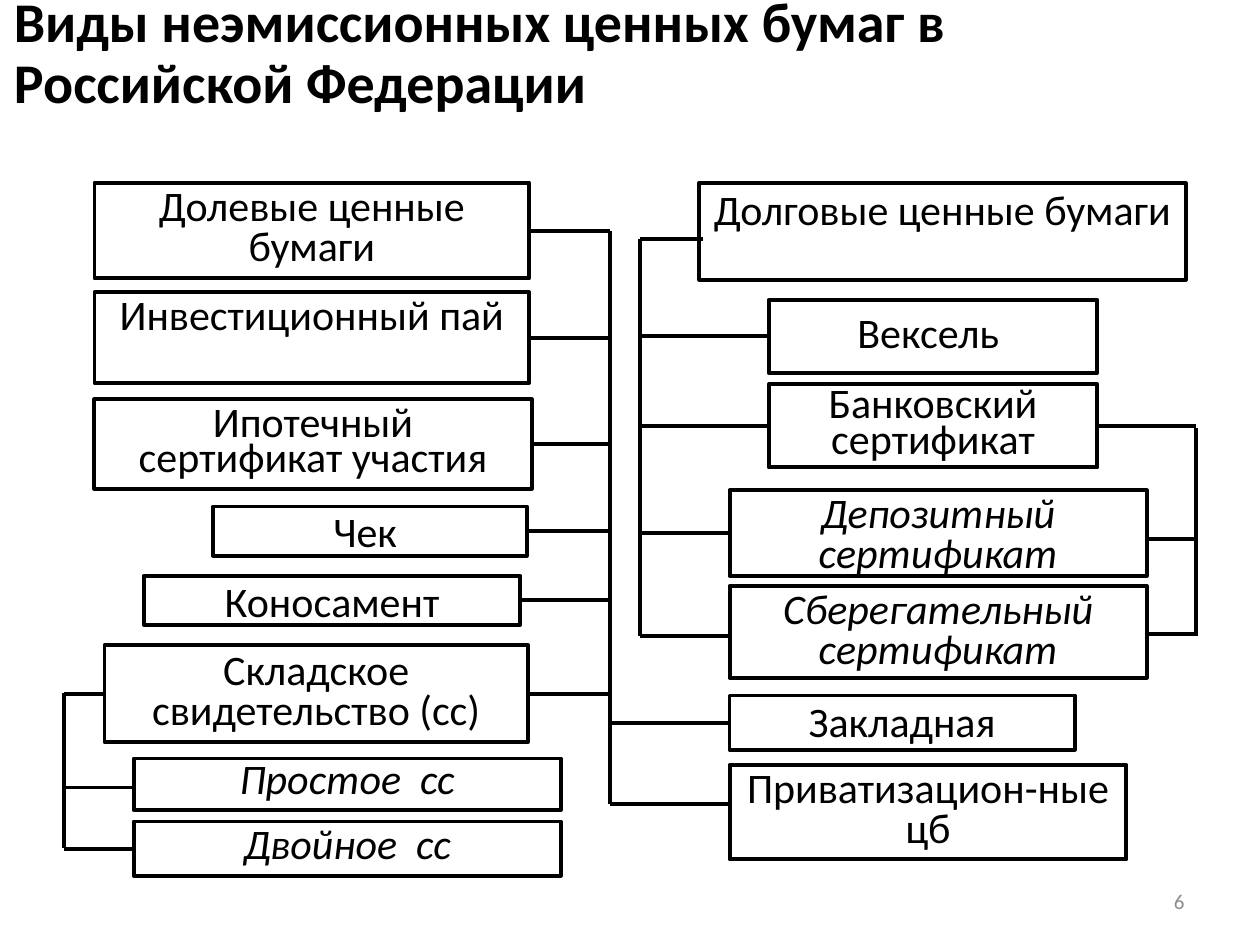
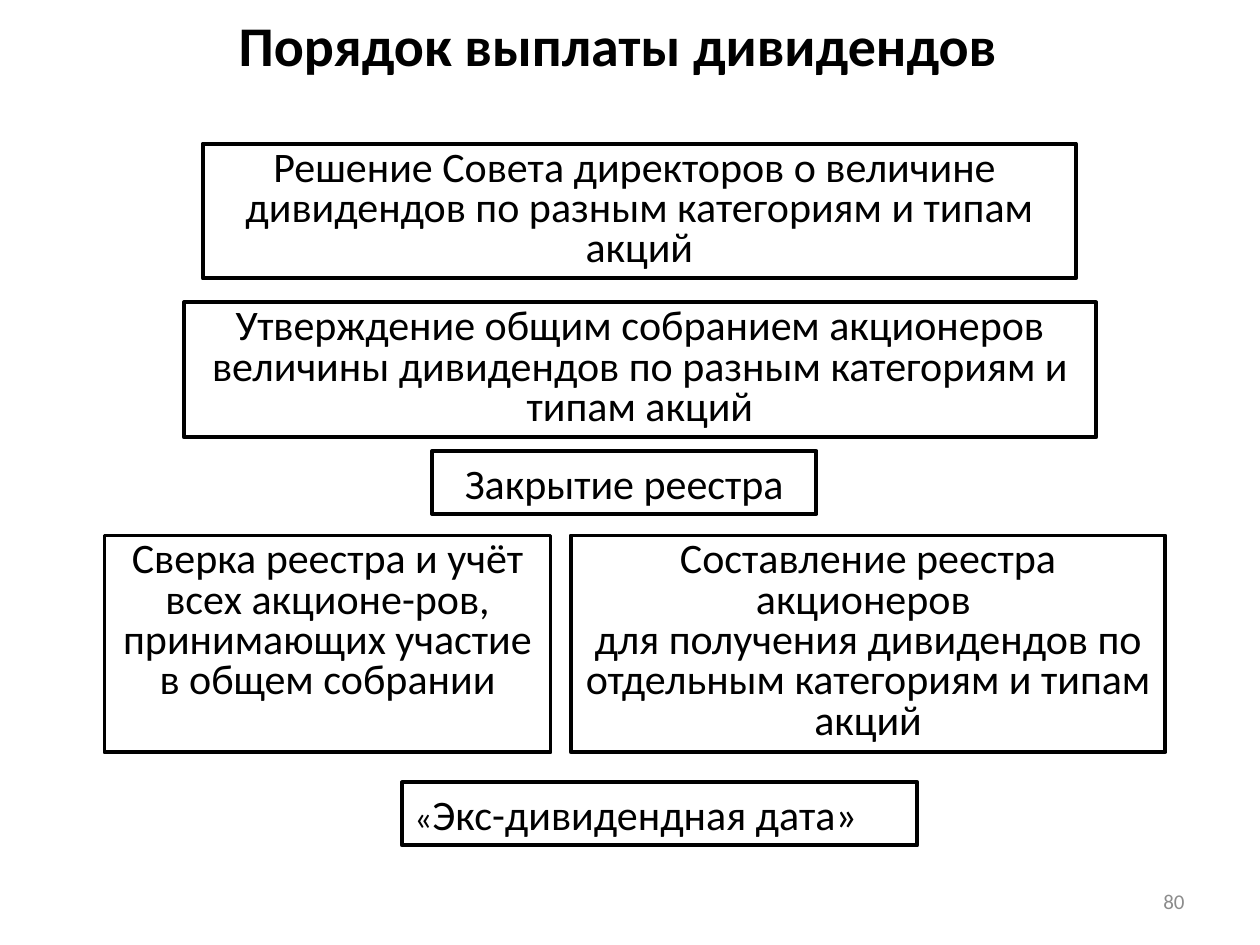
import pptx
import pptx.util
import pptx.dml.color
import pptx.enum.text
import pptx.enum.shapes
import pptx.oxml.ns
import lxml.etree

UNIT = 9144
BLACK, GREY = "000000", "8C8C8C"
FACE = "Calibri"
LEFT, MID, RIGHT = (pptx.enum.text.PP_ALIGN.LEFT, pptx.enum.text.PP_ALIGN.CENTER,
                    pptx.enum.text.PP_ALIGN.RIGHT)
TOP, HALF = pptx.enum.text.MSO_ANCHOR.TOP, pptx.enum.text.MSO_ANCHOR.MIDDLE


def tint(color):
    return pptx.dml.color.RGBColor.from_string(color)


def write(frame, paras, align, anchor, space, color=BLACK, bold=False, slant=False):
    frame.word_wrap = True
    frame.auto_size = pptx.enum.text.MSO_AUTO_SIZE.NONE
    frame.vertical_anchor = anchor
    for rank, runs in enumerate(paras):
        para = frame.add_paragraph() if rank else frame.paragraphs[0]
        para.alignment = align
        para.line_spacing = space
        for text, size in runs:
            run = para.add_run()
            run.text = text
            run.font.name = FACE
            run.font.size = pptx.util.Pt(size)
            run.font.bold = bold
            run.font.italic = slant
            run.font.color.rgb = tint(color)


deck = pptx.Presentation()
deck.slide_width, deck.slide_height = 1000 * UNIT, 750 * UNIT

heads = [
    ("Виды неэмиссионных ценных бумаг в Российской Федерации", (1, 1, 900, 85), LEFT, "6"),
    ("Порядок выплаты дивидендов", (83, 0, 815, 77), MID, "80"),
]
slides = []
for text, area, align, count in heads:
    slide = deck.slides.add_slide(deck.slide_layouts[5])
    slides.append(slide)
    title = slide.shapes.title
    title.left, title.top, title.width, title.height = [n * UNIT for n in area]
    write(title.text_frame, [[(text, 32)]], align, HALF, 0.9, bold=True)
    title.text_frame.paragraphs[0].space_after = pptx.util.Pt(6)
    foot = slide.shapes.add_textbox(717 * UNIT, 695 * UNIT, 233 * UNIT, 40 * UNIT)
    write(foot.text_frame, [[(count, 12)]], RIGHT, HALF, 1.0, GREY)

kinds = [
    ("share", "Долевые ценные бумаги", (75, 145, 345, 76), 0.8, TOP, False),
    ("debt", "Долговые ценные бумаги", (555, 145, 386, 77), 0.9, TOP, False),
    ("unit", "Инвестиционный пай", (75, 232, 345, 72), 0.8, TOP, False),
    ("saving", "Сберегательный сертификат", (579, 465, 331, 73), 0.8, TOP, True),
    ("deposit", "Депозитный сертификат", (579, 389, 331, 68), 0.8, TOP, True),
    ("bill", "Вексель ", (610, 238, 261, 58), 1.0, TOP, False),
    ("bank", "Банковский сертификат", (610, 305, 261, 66), 0.7, HALF, False),
    ("check", "Чек ", (169, 402, 249, 39), 1.0, HALF, False),
    ("lading", "Коносамент", (114, 457, 299, 39), 1.0, HALF, False),
    ("store", "Складское свидетельство (сс)", (83, 512, 336, 77), 0.8, HALF, False),
    ("pledge", "Закладная", (579, 552, 274, 43), 0.9, TOP, False),
    ("private", "Приватизацион-ные цб", (579, 607, 315, 75), 0.8, TOP, False),
    ("single", "Простое  сс", (106, 602, 339, 41), 0.7, HALF, True),
    ("double", "Двойное  сс", (106, 652, 339, 43), 0.7, HALF, True),
    ("loan", "Ипотечный сертификат участия", (75, 317, 347, 71), 0.7, HALF, False),
]
steps = [
    ("board", [[("Решение Совета директоров о величине ", 24)],
               [("дивидендов по разным категориям и типам акций", 24)]],
     (161, 114, 693, 107), 0.8, MID),
    ("vote", [[("Утверждение общим собранием акционеров величины дивидендов "
                "по разным категориям и типам акций", 24)]],
     (146, 240, 724, 107), 0.8, MID),
    ("close", [[("Закрытие реестра", 24)]], (343, 358, 305, 50), 1.0, MID),
    ("audit", [[("Сверка реестра и учёт всех акционе-ров, "
                 "принимающих участие в общем собрании", 24)]],
     (83, 425, 354, 172), 0.8, MID),
    ("list", [[("Составление реестра акционеров ", 24)],
              [("для получения дивидендов по отдельным категориям и типам акций", 24)]],
     (453, 425, 472, 172), 0.8, MID),
    ("date", [[("«", 20), ("Экс-дивидендная дата»", 24)]], (319, 621, 409, 50), 1.0, LEFT),
]
cards = [(slides[0], name, [[(text, 24)]], area, space, MID, anchor, slant)
         for name, text, area, space, anchor, slant in kinds]
cards += [(slides[1], name, paras, area, space, align, TOP, False)
          for name, paras, area, space, align in steps]

boxes = {}
for slide, name, paras, area, space, align, anchor, slant in cards:
    box = slide.shapes.add_shape(pptx.enum.shapes.MSO_SHAPE.RECTANGLE, *[n * UNIT for n in area])
    box.shadow.inherit = False
    box.fill.background()
    box.line.color.rgb = tint(BLACK)
    box.line.width = pptx.util.Pt(2.25)
    write(box.text_frame, paras, align, anchor, space, slant=slant)
    boxes[name] = box

SIDE_L, SIDE_R = 1, 3
trunks = [(484, 183, 638), (508, 190, 505), (949, 340, 503), (51, 550, 673)]
joins = [
    (484, SIDE_R, ["share", "unit", "loan", "check", "lading", "store"]),
    (484, SIDE_L, ["pledge"]),
    (508, SIDE_L, ["bill", "bank", "deposit"]),
    (949, SIDE_R, ["bank"]),
    (51, SIDE_L, ["store", "double"]),
]
stubs = [(558, 508, 190), (949, 909, 428), (951, 909, 503), (579, 508, 505),
         (579, 484, 638), (51, 106, 625)]

wires = [(x, top, x, end, None, 0) for x, top, end in trunks]
wires += [(start, y, end, y, None, 0) for start, end, y in stubs]
wires += [(x, 0, x, 0, boxes[name], side) for x, side, names in joins for name in names]
for left, top, right, end, box, side in wires:
    ends = [n * UNIT for n in (left, top, right, end)]
    if box:
        ends[1] = ends[3] = box.top + box.height // 2
    wire = slides[0].shapes.add_connector(pptx.enum.shapes.MSO_CONNECTOR.STRAIGHT, *ends)
    if box:
        wire.end_connect(box, side)
    wire.line.color.rgb = tint(BLACK)
    wire.line.width = pptx.util.Pt(2.25)
    lxml.etree.SubElement(wire._element.spPr, pptx.oxml.ns.qn("a:effectLst"))

deck.save("out.pptx")
